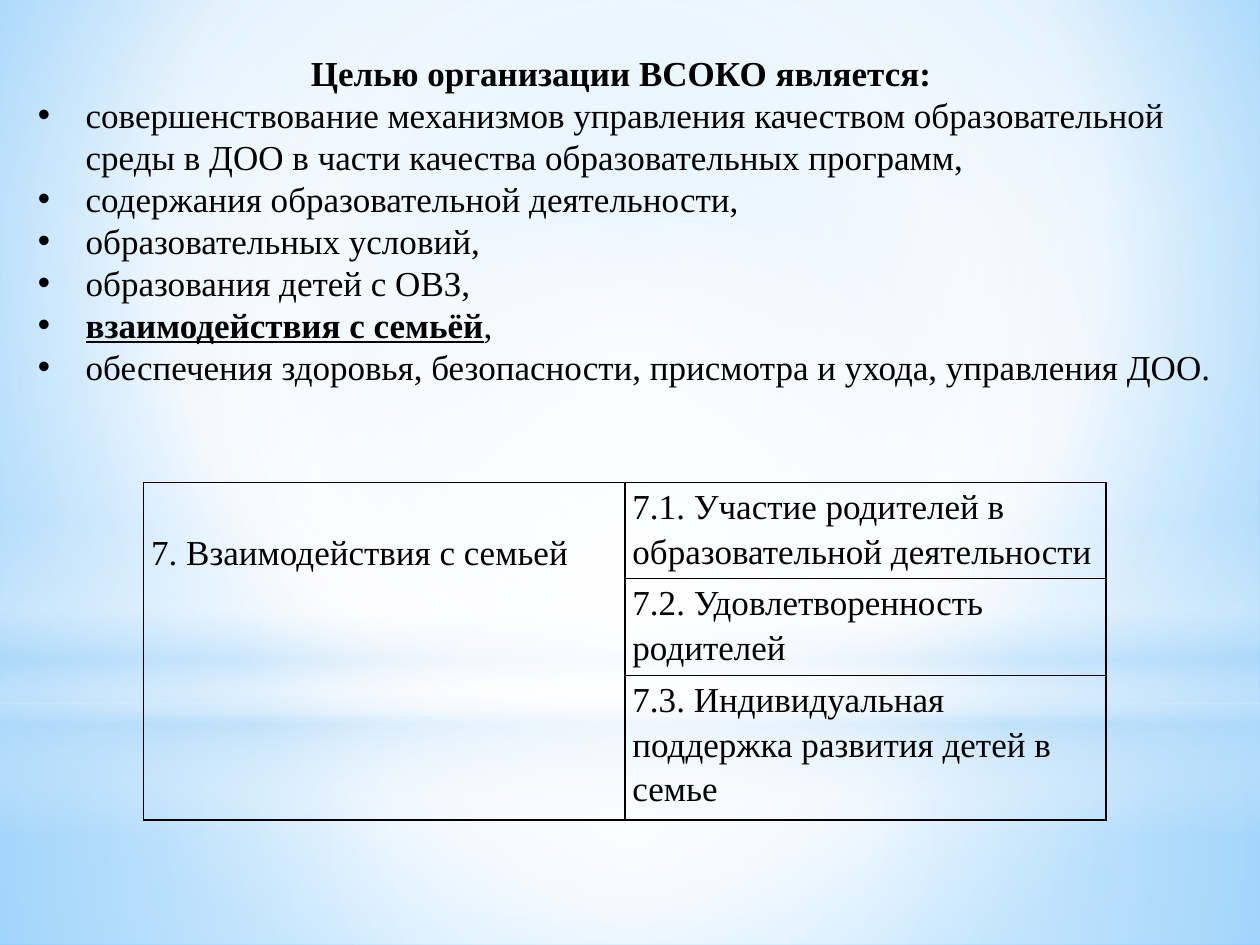
from lxml import etree
from pptx import Presentation
from pptx.dml.color import RGBColor
from pptx.enum import shapes, text
from pptx.oxml import ns
from pptx.util import Inches, Pt

FONT = "Times New Roman"
SIZE = Pt(20)
COLORS = {"ink": "000000", "white": "FFFFFF", "pale": "B4DCFA", "sky": "9ED5FF", "blue": "5BB9FF"}
CENTER = (50, 50, 50, 50)

BACKGROUND = [(0, "sky", 100), (60, "white", 100), (100, "blue", 100)]
BACKGROUND_FOCUS = (20, 10, 20, 60)
GLOWS = [
    ("RECTANGLE", (0, 5.58, 10, 1.92), [(0, "white", 91), (37, "white", 76), (100, "pale", 79)], CENTER),
    ("RECTANGLE", (0, 0, 10, 5.58), [(0, "white", 89), (48, "white", 62), (100, "pale", 79)], CENTER),
    ("RECTANGLE", (0, 4.12, 10, 2.5),
     [(0, "white", 0), (29, "white", 30), (45, "pale", 40), (55, "white", 26), (65, "pale", 60), (100, "white", 0)],
     None),
    ("OVAL", (0, 1.75, 10, 5.58), [(0, "white", 100), (56, "white", 0)], CENTER),
]

HEADING = "Целью организации ВСОКО является: "
GOALS = [
    "совершенствование механизмов управления качеством образовательной среды в ДОО "
    "в части качества образовательных программ,",
    "содержания образовательной деятельности,",
    "образовательных условий,",
    "образования детей с ОВЗ,",
    "взаимодействия с семьёй,",
    "обеспечения здоровья, безопасности, присмотра и ухода, управления ДОО.",
]
EMPHASIS = "взаимодействия с семьёй"
SECTION = "7. Взаимодействия с семьей"
CRITERIA = [
    ("7.1. Участие родителей в образовательной деятельности", 0.76),
    ("7.2. Удовлетворенность родителей", 0.77),
    ("7.3. Индивидуальная поддержка развития детей в семье", 1.15),
]


def child(parent, tag, **attributes):
    element = etree.SubElement(parent, ns.qn(tag))
    for name, value in attributes.items():
        element.set(name, str(value))
    return element


def paint_gradient(fill, owner, stops, focus):
    fill.background()
    empty = owner.find(".//" + ns.qn("a:noFill"))
    gradient = etree.Element(ns.qn("a:gradFill"), rotWithShape="1")
    stop_list = child(gradient, "a:gsLst")
    for position, color, opacity in stops:
        stop = child(stop_list, "a:gs", pos=position * 1000)
        child(child(stop, "a:srgbClr", val=COLORS[color]), "a:alpha", val=opacity * 1000)
    if focus:
        edges = {side: edge * 1000 for side, edge in zip("ltrb", focus)}
        child(child(gradient, "a:path", path="circle"), "a:fillToRect", **edges)
    else:
        child(gradient, "a:lin", ang=5400000, scaled=0)
    empty.getparent().replace(empty, gradient)


def place(shape, left, top, width, height):
    shape.left, shape.top = Inches(left), Inches(top)
    shape.width, shape.height = Inches(width), Inches(height)


def style(paragraph, bold=False, spacing=1.0):
    paragraph.line_spacing = spacing
    paragraph.space_before = paragraph.space_after = Pt(0)
    font = paragraph.font
    font.name, font.size, font.bold = FONT, SIZE, bold
    font.color.rgb = RGBColor.from_string(COLORS["ink"])


def prepare_frame(shape, top_inset, bottom_inset):
    frame = shape.text_frame
    frame.word_wrap = True
    frame.auto_size = text.MSO_AUTO_SIZE.NONE
    frame.vertical_anchor = text.MSO_ANCHOR.TOP
    frame.margin_top, frame.margin_bottom = Inches(top_inset), Inches(bottom_inset)
    return frame


def add_glows(slide):
    paint_gradient(slide.background.fill, slide.element, BACKGROUND, BACKGROUND_FOCUS)
    for kind, box, stops, focus in GLOWS:
        glow = slide.shapes.add_shape(shapes.MSO_SHAPE[kind], *map(Inches, box))
        glow.shadow.inherit = False
        paint_gradient(glow.fill, glow.element, stops, focus)
        glow.line.fill.background()
        slide.shapes.title.element.addprevious(glow.element)


def fill_goals(slide):
    title, body = slide.placeholders
    place(title, 0.2, 0.36, 9.53, 0.38)
    heading = prepare_frame(title, 0.05, 0).paragraphs[0]
    heading.text = HEADING
    heading.alignment = text.PP_ALIGN.CENTER
    style(heading, bold=True)

    place(body, 0.2, 0.74, 9.53, 2.41)
    frame = prepare_frame(body, 0, 0.05)
    for index, goal in enumerate(GOALS):
        paragraph = frame.add_paragraph() if index else frame.paragraphs[0]
        if goal.startswith(EMPHASIS):
            strong = paragraph.add_run()
            strong.text = EMPHASIS
            strong.font.bold = strong.font.underline = True
            goal = goal[len(EMPHASIS):]
        paragraph.add_run().text = goal
        style(paragraph)
        properties = paragraph._p.get_or_add_pPr()
        properties.set("marL", str(Inches(0.38)))
        properties.set("indent", str(-Inches(0.38)))
        bullet_font = etree.Element(ns.qn("a:buFont"), typeface="Arial")
        bullet = etree.Element(ns.qn("a:buChar"), char="•")
        properties.find(ns.qn("a:defRPr")).addprevious(bullet_font)
        bullet_font.addnext(bullet)


def format_cell(cell):
    cell.margin_left = cell.margin_right = Inches(0.06)
    cell.margin_top = cell.margin_bottom = 0
    properties = cell._tc.get_or_add_tcPr()
    for side in "LRTB":
        border = child(properties, f"a:ln{side}", w=Pt(1))
        child(child(border, "a:solidFill"), "a:srgbClr", val=COLORS["ink"])
    cell.fill.background()
    style(cell.text_frame.paragraphs[0], spacing=1.15)


def add_criteria(slide):
    heights = [height for _, height in CRITERIA]
    box = (1.14, 3.83, 7.64, sum(heights))
    table = slide.shapes.add_table(len(CRITERIA), 2, *map(Inches, box)).table
    table.first_row = table.horz_banding = False
    for row, (criterion, height) in enumerate(CRITERIA):
        table.rows[row].height = Inches(height)
        table.cell(row, 1).text = criterion
    section = table.cell(0, 0)
    section.text = SECTION
    for cell in table.iter_cells():
        format_cell(cell)
    section.margin_top = Inches(0.36)
    section.merge(table.cell(len(CRITERIA) - 1, 0))


def main():
    """Build the slide on the goals of quality assessment."""
    presentation = Presentation()
    presentation.slide_width, presentation.slide_height = Inches(10), Inches(7.5)
    slide = presentation.slides.add_slide(presentation.slide_layouts[1])
    add_glows(slide)
    fill_goals(slide)
    add_criteria(slide)
    presentation.save("out.pptx")


if __name__ == "__main__":
    main()
